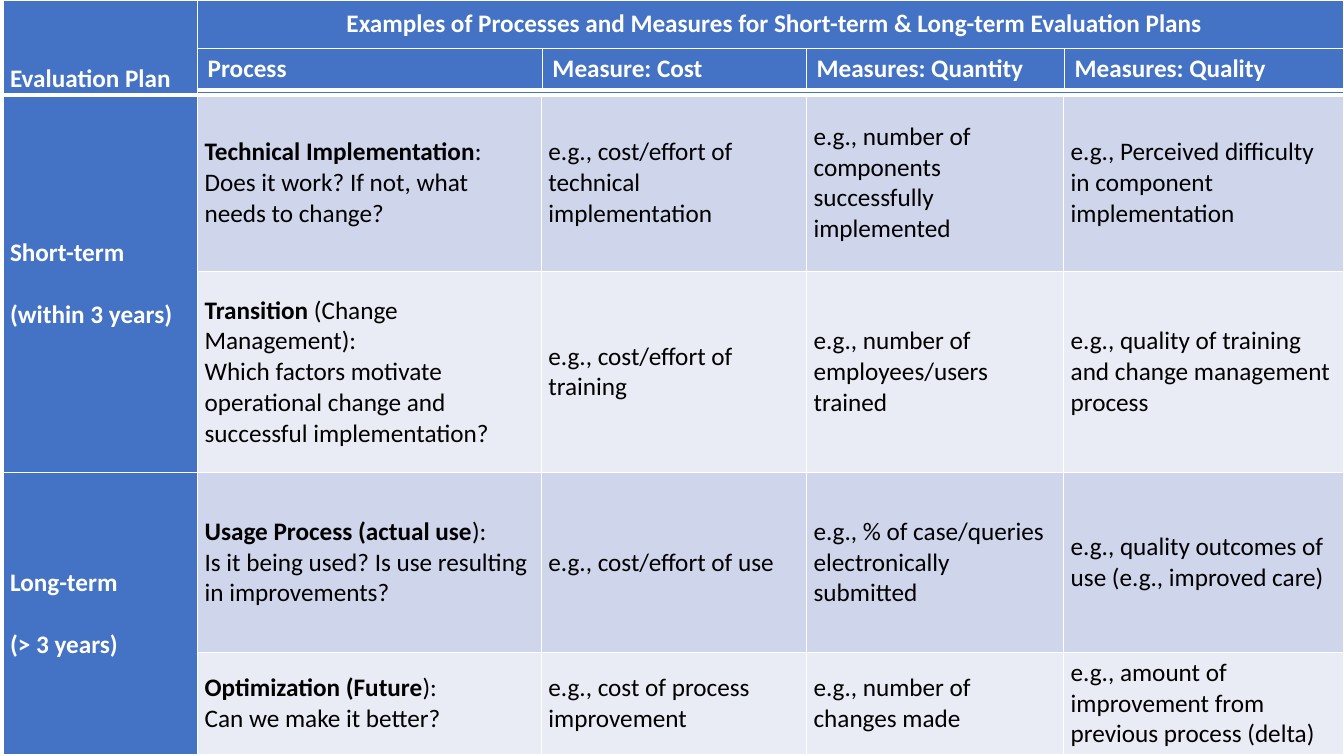
from pptx import Presentation
from pptx.dml.color import RGBColor
from pptx.enum.text import MSO_ANCHOR, PP_ALIGN
from pptx.oxml import parse_xml
from pptx.oxml.ns import nsdecls
from pptx.util import Inches, Pt

WHITE = RGBColor(0xFF, 0xFF, 0xFF)
BLACK = RGBColor(0x00, 0x00, 0x00)
BLUE = RGBColor(0x44, 0x72, 0xC4)
BAND_DARK = RGBColor(0xCF, 0xD5, 0xEA)
BAND_LIGHT = RGBColor(0xE9, 0xEB, 0xF5)
FONT, SIZE = "Calibri", Pt(18)
LINE_GAP = Pt(22)

PLAN_COLS = [1.93, 3.41, 2.63, 2.55, 2.78]
PLAN_ROWS = [0.94, 1.75, 2, 1.78, 1.02]
MEASURE_COLS = [3.42, 2.62, 2.56, 2.77]
MEASURE_ROWS = [0.41]

TITLE = "Examples of Processes and Measures for Short-term & Long-term Evaluation Plans"
MEASURES = ["Process", "Measure: Cost", "Measures: Quantity", "Measures: Quality"]
TERMS = [("Short-term", "(within 3 years)"), ("Long-term", "(> 3 years)")]
# Each process: bold lead, rest of the heading, question, then its three measures
PROCESSES = [
    ("Technical Implementation", ":", "Does it work? If not, what needs to change?",
     "e.g., cost/effort of technical implementation",
     "e.g., number of components successfully implemented",
     "e.g., Perceived difficulty in component implementation"),
    ("Transition ", "(Change Management):",
     "Which factors motivate operational change and successful implementation?",
     "e.g., cost/effort of training",
     "e.g., number of employees/users trained",
     "e.g., quality of training and change management process"),
    ("Usage Process (actual use", "):",
     "Is it being used? Is use resulting in improvements?",
     "e.g., cost/effort of use",
     "e.g., % of case/queries electronically submitted",
     "e.g., quality outcomes of use (e.g., improved care)"),
    ("Optimization (Future", "):", "Can we make it better?",
     "e.g., cost of process improvement",
     "e.g., number of changes made",
     "e.g., amount of improvement from previous process (delta)"),
]


def set_borders(cell, widths):
    """Draw white cell borders; widths maps a side (L, R, T, B) to points."""
    properties = cell._tc.get_or_add_tcPr()
    for index, (side, width) in enumerate(widths.items()):
        properties.insert(index, parse_xml(
            f'<a:ln{side} {nsdecls("a")} w="{Pt(width)}"><a:solidFill>'
            f'<a:srgbClr val="{WHITE}"/></a:solidFill></a:ln{side}>'))


def format_run(run, color, bold):
    run.font.name, run.font.size = FONT, SIZE
    run.font.color.rgb, run.font.bold = color, bold


def fill_cell(cell, text, color=BLACK, bold=False, anchor=MSO_ANCHOR.MIDDLE):
    cell.text_frame.text = text
    cell.vertical_anchor = anchor
    for paragraph in cell.text_frame.paragraphs:
        for run in paragraph.runs:
            format_run(run, color, bold)


def add_grid(slide, left, top, cols, rows):
    """Add an unstyled table with the given column widths and row heights."""
    grid = slide.shapes.add_table(
        len(rows), len(cols), Inches(left), Inches(top),
        Inches(sum(cols)), Inches(sum(rows))).table
    grid.first_row = grid.horz_banding = False
    for column, width in zip(grid.columns, cols):
        column.width = Inches(width)
    for row, height in zip(grid.rows, rows):
        row.height = Inches(height)
    return grid


def add_plan_table(slide, left, top):
    plan = add_grid(slide, left, top, PLAN_COLS, PLAN_ROWS)
    for row in range(len(PLAN_ROWS)):
        for col in range(len(PLAN_COLS)):
            cell = plan.cell(row, col)
            cell.margin_left = cell.margin_right = Inches(0.07)
            cell.margin_top = cell.margin_bottom = 0
            cell.fill.solid()
            band = BAND_DARK if row % 2 else BAND_LIGHT
            cell.fill.fore_color.rgb = BLUE if row == 0 or col == 0 else band
            set_borders(cell, {"L": 1, "R": 1, "T": 1, "B": 3} if row == 0
                        else {"L": 1, "R": 1, "T": 3 if row == 1 else 1, "B": 1})

    # Header row
    fill_cell(plan.cell(0, 0), "Evaluation Plan", WHITE, True, MSO_ANCHOR.BOTTOM)
    title = plan.cell(0, 1)
    title.merge(plan.cell(0, 4))
    title.margin_top, title.margin_left = Inches(0.08), Inches(0.14)
    fill_cell(title, TITLE, WHITE, True, MSO_ANCHOR.TOP)
    title.text_frame.paragraphs[0].alignment = PP_ALIGN.CENTER

    # Terms, two rows each
    for index, lines in enumerate(TERMS):
        row = 1 + 2 * index
        term = plan.cell(row, 0)
        term.merge(plan.cell(row + 1, 0))
        fill_cell(term, "\n".join(lines), WHITE, True)
        term.text_frame.paragraphs[1].space_before = LINE_GAP

    # Processes and their measures
    for row, (lead, rest, question, *examples) in enumerate(PROCESSES, 1):
        process = plan.cell(row, 1)
        fill_cell(process, f"{lead}\n{question}")
        heading = process.text_frame.paragraphs[0]
        heading.runs[0].font.bold = True
        tail = heading.add_run()
        tail.text = rest
        format_run(tail, BLACK, False)
        for col, example in enumerate(examples, 2):
            fill_cell(plan.cell(row, col), example)


def add_measure_header(slide, left, top):
    header = add_grid(slide, left, top, MEASURE_COLS, MEASURE_ROWS)
    for col, measure in enumerate(MEASURES):
        cell = header.cell(0, col)
        cell.fill.solid()
        cell.fill.fore_color.rgb = BLUE
        set_borders(cell, {"L": 1, "R": 1, "T": 1, "B": 3})
        fill_cell(cell, measure, WHITE, True, MSO_ANCHOR.TOP)


def main():
    deck = Presentation()
    deck.slide_width, deck.slide_height = Inches(13.33), Inches(7.5)
    slide = deck.slides.add_slide(deck.slide_layouts[6])
    add_plan_table(slide, 0.03, 0)
    add_measure_header(slide, 1.96, 0.48)
    deck.save("out.pptx")


if __name__ == "__main__":
    main()
